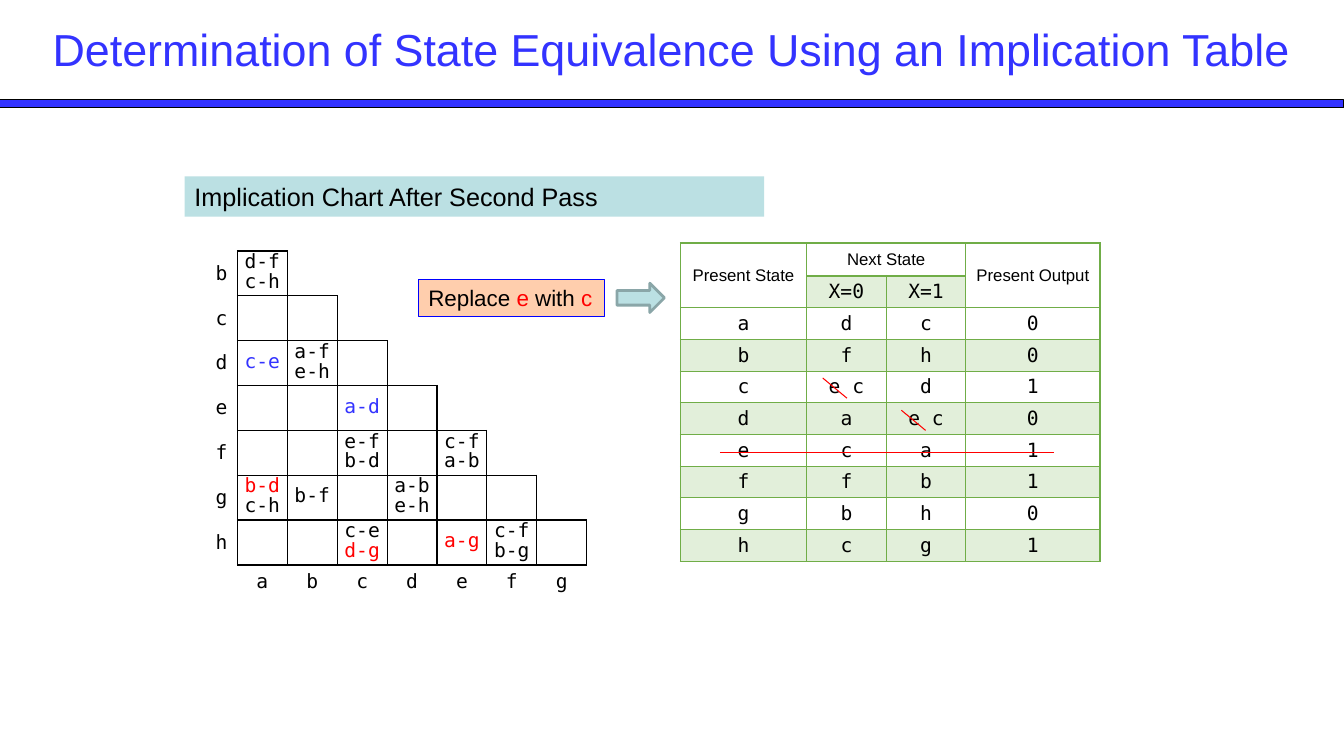
from lxml import etree
from pptx import Presentation
from pptx import util as u
from pptx.dml import color
from pptx.enum import shapes, text
from pptx.oxml.ns import qn

PX = 9144  # EMU per px, 100 px to the inch
MONO = "DejaVu Sans Mono"
BLACK, BLUE, RED, GREEN, TEAL = "000000", "3333FF", "FF0000", "70AD47", "BBE0E3"
SIDES = {"L": (0, -1), "R": (0, 1), "T": (-1, 0), "B": (1, 0)}
MID = text.MSO_ANCHOR.MIDDLE
LEFT, MIDST, RIGHT = text.PP_ALIGN.LEFT, text.PP_ALIGN.CENTER, text.PP_ALIGN.RIGHT
hue = color.RGBColor.from_string


def write(frame, lines, size, font, align, gap=None):
    """Fill a text frame; each line is a list of (words, colour) runs."""
    for i, line in enumerate(lines):
        para = frame.add_paragraph() if i else frame.paragraphs[0]
        para.alignment = align
        if gap:
            para.line_spacing = u.Pt(gap)
        for words, tint in line:
            run = para.add_run()
            run.text = words
            run.font.size, run.font.name = u.Pt(size), font
            run.font.color.rgb = hue(tint)


def edge(cell, side, width, tint):
    """Draw one cell border, or clear it when tint is None."""
    line = etree.SubElement(cell._tc.get_or_add_tcPr(), qn("a:ln" + side),
                            w=str(u.Pt(width)))
    if tint:
        fill = etree.SubElement(line, qn("a:solidFill"))
        etree.SubElement(fill, qn("a:srgbClr"), val=tint)
    else:
        etree.SubElement(line, qn("a:noFill"))


deck = Presentation()
deck.slide_width, deck.slide_height = 1333 * PX, 750 * PX
slide = deck.slides.add_slide(deck.slide_layouts[6])
items = slide.shapes

# Title, rule, caption, note and arrow
title = items.add_textbox(21 * PX, 13 * PX, 1291 * PX, 71 * PX).text_frame
title.word_wrap, title.vertical_anchor = True, MID
write(title, [[("Determination of State Equivalence Using an Implication Table", BLUE)]],
      32, "Arial", MIDST)

caption = [("Implication Chart After Second Pass", BLACK)]
note = [("Replace ", BLACK), ("e", RED), (" with ", BLACK), ("c", RED)]
RECT, ARROW = shapes.MSO_SHAPE.RECTANGLE, shapes.MSO_SHAPE.RIGHT_ARROW
for kind, box, fill, rim, width, size, runs in [
    (RECT, (0, 99, 1333, 8), BLUE, BLACK, 0.75, 0, []),
    (RECT, (183, 175, 575, 40), TEAL, None, 0, 18, caption),
    (RECT, (415, 277, 185, 37), "FFCEAD", "0000FF", 0.75, 16, note),
    (ARROW, (612, 281, 47, 29), TEAL, "8AA6A8", 2, 0, []),
]:
    item = items.add_shape(kind, *[n * PX for n in box])
    item.shadow.inherit = False
    item.fill.solid()
    item.fill.fore_color.rgb = hue(fill)
    if rim:
        item.line.color.rgb = hue(rim)
        item.line.width = u.Pt(width)
    else:
        item.line.fill.background()
    if runs:
        item.text_frame.word_wrap = runs is caption
        write(item.text_frame, [runs], size, "Arial", LEFT)

# Implication chart: keys are row state, then column state
states = "abcdefgh"
pairs = {
    "ba": "d-f c-h", "da": "c-e", "db": "a-f e-h", "ec": "a-d",
    "fc": "e-f b-d", "fe": "c-f a-b", "ga": "b-d c-h", "gb": "b-f",
    "gd": "a-b e-h", "hc": "c-e d-g", "he": "a-g", "hf": "c-f b-g",
}
marks = {("da", "c-e"): BLUE, ("ec", "a-d"): BLUE, ("ga", "b-d"): RED,
         ("hc", "d-g"): RED, ("he", "a-g"): RED}
flush = {"margin_left": 0, "margin_right": 0, "margin_top": 0,
         "margin_bottom": 0, "vertical_anchor": MID}
steps = {(r, c) for r in range(7) for c in range(1, r + 2)}

chart = items.add_table(8, 8, 186 * PX, 249 * PX, 396 * PX, 356 * PX).table
chart.first_row = chart.horz_banding = False
for r in range(8):
    for c in range(8):
        cell = chart.cell(r, c)
        for side, (down, over) in SIDES.items():
            drawn = (r, c) in steps or (r + down, c + over) in steps
            edge(cell, side, 1, BLACK if drawn else None)
        cell.fill.background()
        if c == 0 and r < 7:
            cell.vertical_anchor = MID
            write(cell.text_frame, [[(states[r + 1], BLACK)]], 14, MONO, RIGHT)
        elif r == 7 and c:
            write(cell.text_frame, [[(states[c - 1], BLACK)]], 14, MONO, MIDST)
        elif (r, c) in steps:
            key = states[r + 1] + states[c - 1]
            for name, value in flush.items():
                setattr(cell, name, value)
            lines = [[(p, marks.get((key, p), BLACK))] for p in pairs.get(key, "").split()]
            write(cell.text_frame, lines, 14, MONO, MIDST, 14)

# State table
rows = [
    ["Present State", "Next State", "", "Present Output"],
    ["", "X=0", "X=1", ""],
    ["a", "d", "c", "0"],
    ["b", "f", "h", "0"],
    ["c", "e c", "d", "1"],
    ["d", "a", "e c", "0"],
    ["e", "c", "a", "1"],
    ["f", "f", "b", "1"],
    ["g", "b", "h", "0"],
    ["h", "c", "g", "1"],
]
table = items.add_table(10, 4, 675 * PX, 241 * PX, 416 * PX, 316 * PX).table
table.first_row = table.horz_banding = False
for col, width in zip(table.columns, [125, 79, 79, 133]):
    col.width = width * PX
for r, row in enumerate(table.rows):
    row.height = 33 * PX if r == 0 else (316 - 33) * PX // 9
for top, end in [((0, 0), (1, 0)), ((0, 1), (0, 2)), ((0, 3), (1, 3))]:
    table.cell(*top).merge(table.cell(*end))
for r, row in enumerate(rows):
    for c, words in enumerate(row):
        cell = table.cell(r, c)
        for side in SIDES:
            thick = c in (1, 2) and (r, side) in [(0, "B"), (1, "T")]
            edge(cell, side, 2 if thick else 1, GREEN)
        if r % 2 and (r > 1 or words):
            cell.fill.solid()
            cell.fill.fore_color.rgb = hue("E2EFDA")
        else:
            cell.fill.background()
        for name, value in flush.items():
            setattr(cell, name, value)
        if words:
            size, font = (14, MONO) if r else (12, "Arial")
            write(cell.text_frame, [[(words, BLACK)]], size, font, MIDST)

# Strokes through the replaced state
for ends in [(714, 449, 1045, 449), (816, 375, 840, 395), (894, 407, 918, 427)]:
    stroke = items.add_connector(shapes.MSO_CONNECTOR.STRAIGHT, *[n * PX for n in ends])
    stroke.line.color.rgb = hue(RED)
    stroke.line.width = u.Pt(0.75)
    etree.SubElement(stroke._element.spPr, qn("a:effectLst"))

deck.save("out.pptx")
